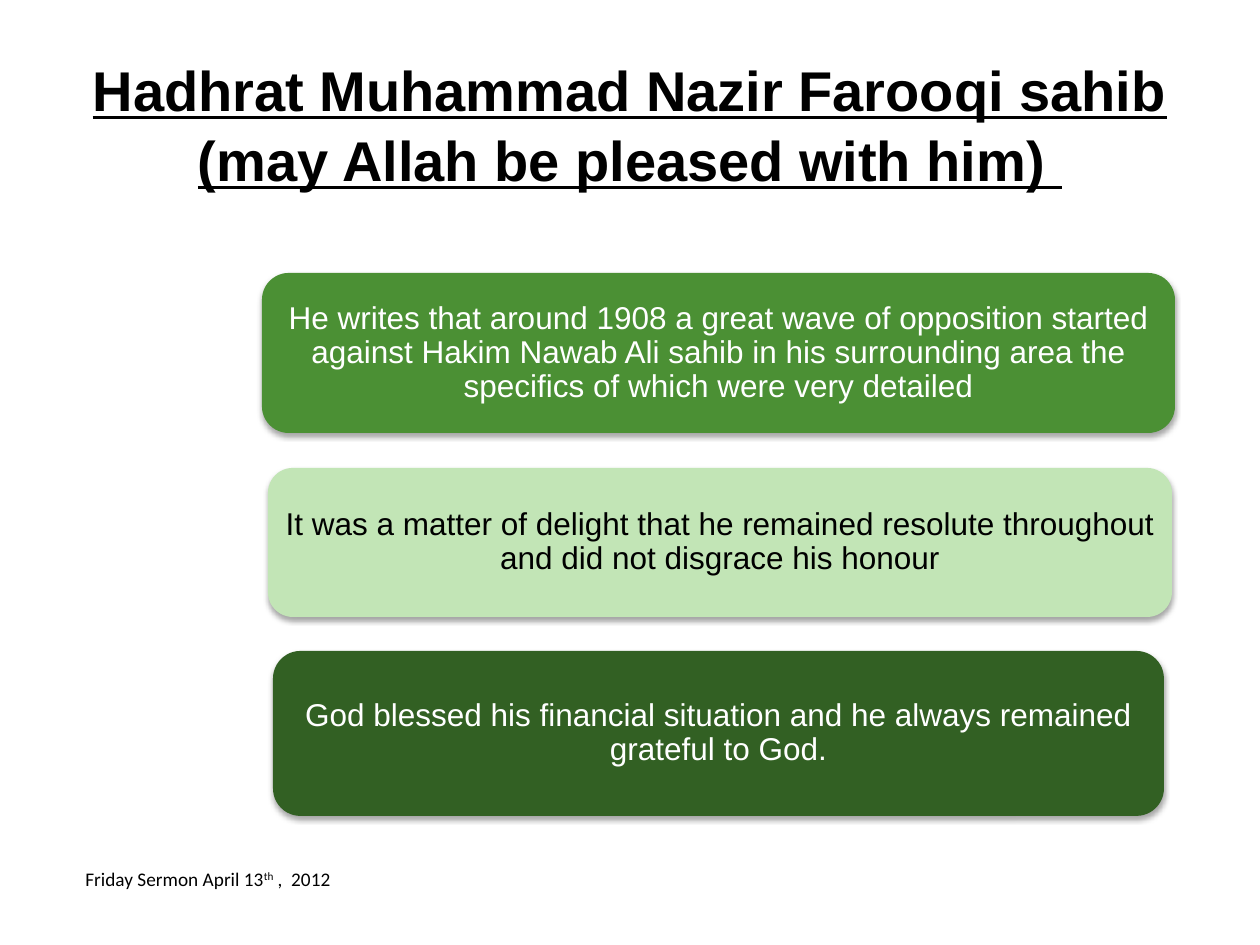
"""Build a sermon slide with a title, three rounded statement cards and a date line."""
import lxml.etree
import pptx
import pptx.dml.color
import pptx.enum.shapes
import pptx.enum.text
import pptx.oxml
import pptx.oxml.ns
import pptx.util

PX = 914400 // 126
COLORS = {
    "black": "000000",
    "white": "FFFFFF",
    "green": "4B9034",
    "pale": "C2E5B6",
    "dark": "326023",
}
SHADOW = (
    f'<a:effectLst {pptx.oxml.ns.nsdecls("a")}>'
    '<a:outerShdw blurRad="39370" dist="22860" dir="5400000" rotWithShape="0">'
    f'<a:srgbClr val="{COLORS["black"]}"><a:alpha val="35000"/></a:srgbClr>'
    "</a:outerShdw></a:effectLst>"
)


def color(name):
    return pptx.dml.color.RGBColor.from_string(COLORS[name])


def add_span(para, text, size, font, ink):
    span = para.add_run()
    span.text = text
    span.font.size = pptx.util.Pt(size)
    span.font.name = font
    span.font.color.rgb = color(ink)
    return span


deck = pptx.Presentation()
deck.slide_width = 1260 * PX
deck.slide_height = 945 * PX
page = deck.slides.add_slide(deck.slide_layouts[5])

title = page.shapes.title
title.left, title.top, title.width, title.height = (n * PX for n in (63, 53, 1134, 126))
frame = title.text_frame
frame.margin_left = frame.margin_top = frame.margin_right = frame.margin_bottom = 0
frame.word_wrap = True
frame.auto_size = pptx.enum.text.MSO_AUTO_SIZE.NONE
frame.vertical_anchor = pptx.enum.text.MSO_ANCHOR.TOP
para = frame.paragraphs[0]
para.alignment = pptx.enum.text.PP_ALIGN.CENTER
para.line_spacing = 1.04
span = add_span(
    para,
    "Hadhrat Muhammad Nazir Farooqi sahib (may Allah be pleased with him) ",
    32, "Arial", "black",
)
span.font.bold = True
span.font.underline = True

cards = [
    ((262, 273, 913, 160), "green", "white",
     "He writes that around 1908 a great wave of opposition started against "
     "Hakim Nawab Ali sahib in his surrounding area the specifics of which "
     "were very detailed"),
    ((268, 468, 904, 149), "pale", "black",
     "It was a matter of delight that he remained resolute throughout and "
     "did not disgrace his honour"),
    ((273, 651, 891, 165), "dark", "white",
     "God blessed his financial situation and he always remained grateful to God."),
]
for bounds, fill, ink, text in cards:
    card = page.shapes.add_shape(
        pptx.enum.shapes.MSO_SHAPE.ROUNDED_RECTANGLE, *(n * PX for n in bounds)
    )
    card.fill.solid()
    card.fill.fore_color.rgb = color(fill)
    card.line.fill.background()
    card._element.spPr.append(pptx.oxml.parse_xml(SHADOW))
    frame = card.text_frame
    frame.word_wrap = True
    frame.vertical_anchor = pptx.enum.text.MSO_ANCHOR.MIDDLE
    frame.margin_left = frame.margin_right = 9 * PX
    frame.margin_top = frame.margin_bottom = 5 * PX
    para = frame.paragraphs[0]
    para.alignment = pptx.enum.text.PP_ALIGN.CENTER
    para.line_spacing = 0.9
    add_span(para, text, 18, "Arial", ink)

box = page.shapes.add_textbox(*(n * PX for n in (73, 861, 431, 36)))
box.text_frame.word_wrap = True
box.text_frame.auto_size = pptx.enum.text.MSO_AUTO_SIZE.SHAPE_TO_FIT_TEXT
para = box.text_frame.paragraphs[0]
for text, baseline in (("Friday Sermon April 13", 0), ("th", 30000), (" ,  2012", 0)):
    span = add_span(para, text, 11, "Calibri", "black")
    span.font._element.set("baseline", str(baseline))

deck.save("out.pptx")
